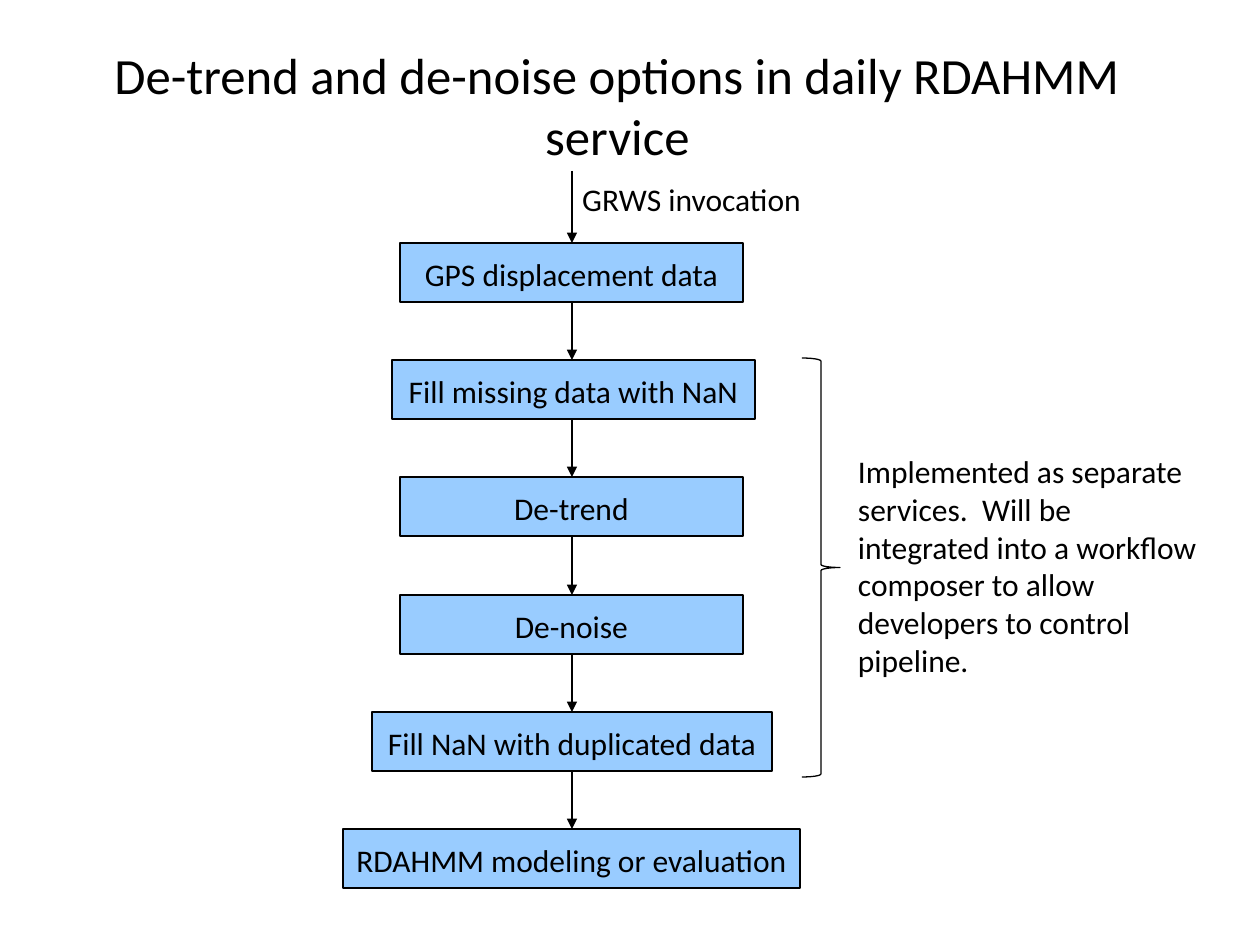
from lxml import etree
from pptx import Presentation
from pptx.dml.color import RGBColor
from pptx.enum.shapes import MSO_CONNECTOR, MSO_SHAPE
from pptx.enum.text import MSO_ANCHOR, PP_ALIGN
from pptx.oxml.ns import qn
from pptx.util import Emu, Pt

CENTER, LEFT = PP_ALIGN.CENTER, PP_ALIGN.LEFT
MIDDLE, TOP = MSO_ANCHOR.MIDDLE, MSO_ANCHOR.TOP
ROUNDED, BRACE = MSO_SHAPE.ROUNDED_RECTANGLE, MSO_SHAPE.RIGHT_BRACE
STRAIGHT = MSO_CONNECTOR.STRAIGHT

FONT, BLACK, BOX_BLUE = "Calibri", "000000", "99CCFF"
TITLE = "De-trend and de-noise options in daily RDAHMM service"
INVOCATION = "GRWS invocation"
NOTE = ("Implemented as separate services.  Will be integrated into a workflow "
        "composer to allow developers to control pipeline.")
# Step text, box left, box width
STEPS = [
    ("GPS displacement data", 400, 343),
    ("Fill missing data with NaN", 392, 363),
    ("De-trend", 400, 343),
    ("De-noise", 400, 343),
    ("Fill NaN with duplicated data", 372, 400),
    ("RDAHMM modeling or evaluation", 343, 457),
]
FLOW_X, FLOW_START = 572, 171
FIRST_TOP, STEP_PITCH, STEP_HEIGHT = 243, 117.2, 59


def px(value):
    return Emu(round(value * 914400 / 126))


def color(hex_string):
    return RGBColor.from_string(hex_string)


def set_outline(line):
    line.color.rgb = color(BLACK)
    line.width = Pt(0.75)


def write(shape, text, size=18, align=CENTER, anchor=MIDDLE, insets=(11, 8, 11, 5)):
    """Set wrapped text; insets are left, top, right, bottom."""
    frame = shape.text_frame
    frame.text = text
    frame.word_wrap = True
    frame.vertical_anchor = anchor
    (frame.margin_left, frame.margin_top,
     frame.margin_right, frame.margin_bottom) = map(px, insets)
    paragraph = frame.paragraphs[0]
    paragraph.alignment = align
    font = paragraph.runs[0].font
    font.name, font.size = FONT, Pt(size)
    font.color.rgb = color(BLACK)


def add_text(slide, text, box, **style):
    write(slide.shapes.add_textbox(*map(px, box)), text, **style)


def add_outlined(slide, kind, box, adjustment, fill=None):
    shape = slide.shapes.add_shape(kind, *map(px, box))
    shape.shadow.inherit = False
    shape.adjustments[0] = adjustment
    if fill:
        shape.fill.solid()
        shape.fill.fore_color.rgb = color(fill)
    else:
        shape.fill.background()
    set_outline(shape.line)
    return shape


def add_down_arrow(slide, top, bottom):
    arrow = slide.shapes.add_connector(
        STRAIGHT, px(FLOW_X), px(top), px(FLOW_X), px(bottom))
    set_outline(arrow.line)
    etree.SubElement(arrow.line._get_or_add_ln(), qn("a:tailEnd"), type="triangle")
    etree.SubElement(arrow._element.spPr, qn("a:effectLst"))


def main():
    deck = Presentation()
    deck.slide_width, deck.slide_height = px(1260), px(945)
    slide = deck.slides.add_slide(deck.slide_layouts[6])

    add_text(slide, TITLE, (89, 27, 1057, 156), size=29, insets=(13, 5, 13, 6))
    add_text(slide, INVOCATION, (563, 168, 257, STEP_HEIGHT))

    arrow_top = FLOW_START
    for index, (text, left, width) in enumerate(STEPS):
        top = round(FIRST_TOP + index * STEP_PITCH)
        step = add_outlined(
            slide, ROUNDED, (left, top, width, STEP_HEIGHT), 0, BOX_BLUE)
        write(step, text)
        add_down_arrow(slide, arrow_top, top)
        arrow_top = top + STEP_HEIGHT

    add_outlined(slide, BRACE, (802, 358, 38, 419), 0.08)
    add_text(slide, NOTE, (847, 446, 372, 241),
             align=LEFT, anchor=TOP, insets=(11, 6, 11, 6))
    deck.save("out.pptx")


if __name__ == "__main__":
    main()
